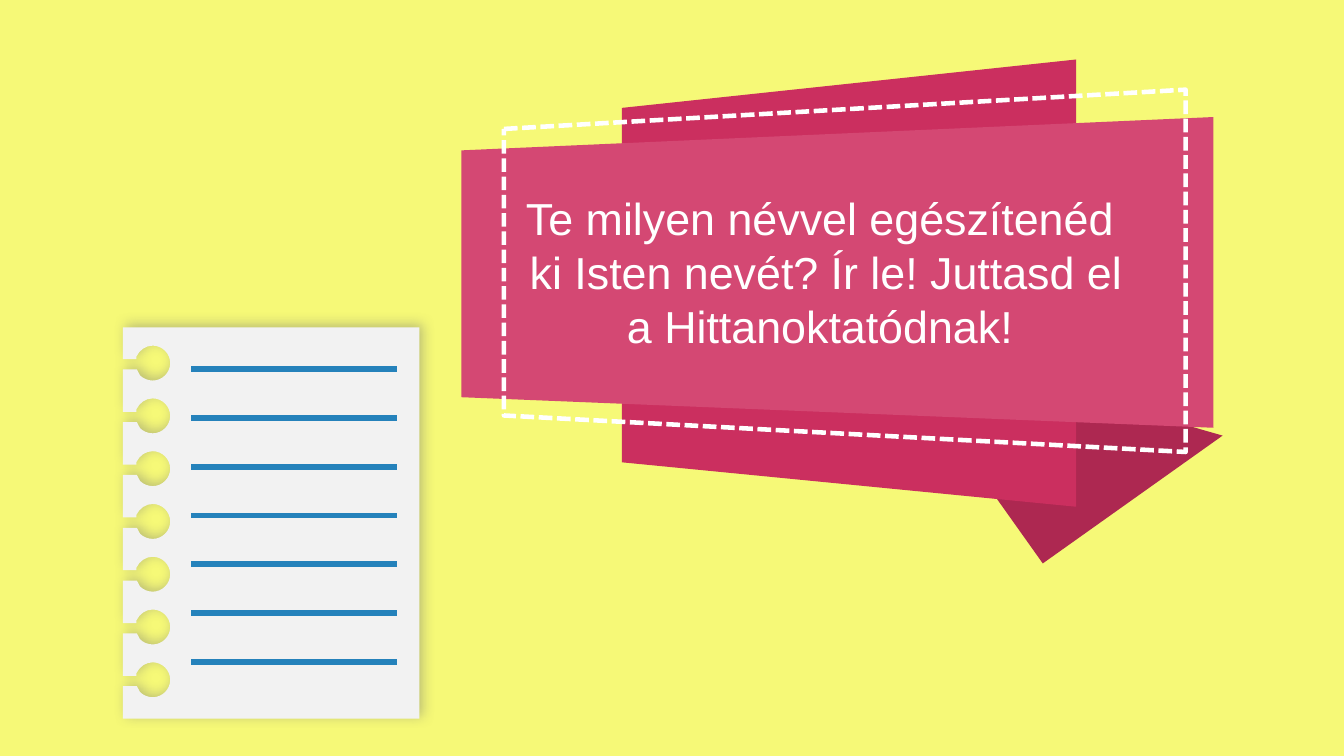
from lxml import etree
from pptx import Presentation
from pptx.dml.color import RGBColor
from pptx.enum import dml, shapes, text
from pptx.oxml import ns
from pptx.util import Cm, Pt

YELLOW = RGBColor(0xF6, 0xF9, 0x77)
DARK = RGBColor(0xAD, 0x28, 0x51)
RED = RGBColor(0xCB, 0x2F, 0x5F)
PINK = RGBColor(0xD4, 0x48, 0x73)
WHITE = RGBColor(0xFF, 0xFF, 0xFF)
PAPER = RGBColor(0xF2, 0xF2, 0xF2)
BLUE = RGBColor(0x25, 0x82, 0xBB)

deck = Presentation()
deck.slide_width, deck.slide_height = Cm(33.87), Cm(19.05)
slide = deck.slides.add_slide(deck.slide_layouts[6])
slide.background.fill.solid()
slide.background.fill.fore_color.rgb = YELLOW


def paint(shape, color):
    """Fill flat, or leave empty when color is None; no line, no shadow."""
    shape.shadow.inherit = False
    shape.line.fill.background()
    if color is None:
        shape.fill.background()
    else:
        shape.fill.solid()
        shape.fill.fore_color.rgb = color


def outline(points, color):
    """Draw a closed polygon through points given in centimetres."""
    spots = [(Cm(x), Cm(y)) for x, y in points]
    pen = slide.shapes.build_freeform(*spots[0])
    pen.add_line_segments(spots[1:], close=True)
    shape = pen.convert_to_shape()
    paint(shape, color)
    return shape


# Folded banner
tail = slide.shapes.add_shape(shapes.MSO_SHAPE.ISOSCELES_TRIANGLE,
                              Cm(23.75), Cm(6.27), Cm(5.56), Cm(6.96))
tail.adjustments[0] = 0
tail.rotation = 324.6
paint(tail, DARK)
outline([(15.67, 2.72), (27.12, 1.5), (27.12, 12.77), (15.67, 11.65)], RED)
outline([(11.63, 3.79), (30.58, 2.95), (30.58, 10.78), (11.63, 10.01)], PINK)

# Question
box = slide.shapes.add_textbox(Cm(12.53), Cm(4.69), Cm(16.28), Cm(4.37))
frame = box.text_frame
frame.word_wrap = True
frame.auto_size = text.MSO_AUTO_SIZE.SHAPE_TO_FIT_TEXT
words = ["Te milyen névvel egészítenéd",
         " ki Isten nevét? Ír le! Juttasd el a Hittanoktatódnak!"]
for i, line in enumerate(words):
    para = frame.paragraphs[0] if i == 0 else frame.add_paragraph()
    para.alignment = text.PP_ALIGN.CENTER
    run = para.add_run()
    run.text = line
    run.font.name = "Arial"
    run.font.size = Pt(32)
    run.font.color.rgb = WHITE

# Stitched border
stitch = outline([(12.7, 3.25), (29.88, 2.26), (29.88, 11.39), (12.7, 10.47)], None)
stitch.line.color.rgb = WHITE
stitch.line.width = Pt(3.25)
stitch.line.dash_style = dml.MSO_LINE.SQUARE_DOT

# Notebook page, with ring holes cut from the bottom up
left, top, right, base = 3.1, 8.25, 10.57, 18.11
ring = [(-0.24, 0.39), (-0.12, 0.44), (0, 0.44),
        (0.24, 0.44), (0.44, 0.24), (0.44, 0),
        (0.44, -0.24), (0.24, -0.44), (0, -0.44),
        (-0.18, -0.44), (-0.33, -0.33), (-0.41, -0.17)]
edge = [(left, top), (right, top), (right, base), (left, base)]
bends = []
for i in reversed(range(7)):
    mid = 9.15 + 1.33 * i
    edge += [(left, mid + 0.16), (3.45, mid + 0.16), (3.53, mid + 0.31)]
    bends += range(len(edge), len(edge) + len(ring), 3)
    edge += [(3.85 + x, mid + y) for x, y in ring]
    edge += [(3.44, mid - 0.1), (left, mid - 0.1)]
page = outline(edge, PAPER)

# Turn each three ring points into one curve
trace = page._element.spPr.find(".//" + ns.qn("a:path"))
steps = list(trace)
for start in bends:
    curve = etree.Element(ns.qn("a:cubicBezTo"))
    steps[start].addprevious(curve)
    for step in steps[start:start + 3]:
        curve.append(step[0])
        trace.remove(step)

glow = page._element.spPr.find(ns.qn("a:effectLst"))
shade = etree.SubElement(glow, ns.qn("a:outerShdw"), blurRad=str(Pt(9)),
                         dist=str(Pt(3)), dir=str(315 * 60000),
                         algn="ctr", rotWithShape="0")
tint = etree.SubElement(shade, ns.qn("a:srgbClr"), val="676A73")
etree.SubElement(tint, ns.qn("a:alpha"), val="40000")

# Ruled lines
for i in range(7):
    y = Cm(9.3 + 1.23 * i)
    rule = slide.shapes.add_connector(shapes.MSO_CONNECTOR.STRAIGHT,
                                      Cm(4.82), y, Cm(10.01), y)
    rule.line.color.rgb = BLUE
    rule.line.width = Pt(4.25)
    etree.SubElement(rule._element.spPr, ns.qn("a:effectLst"))

deck.save("out.pptx")
